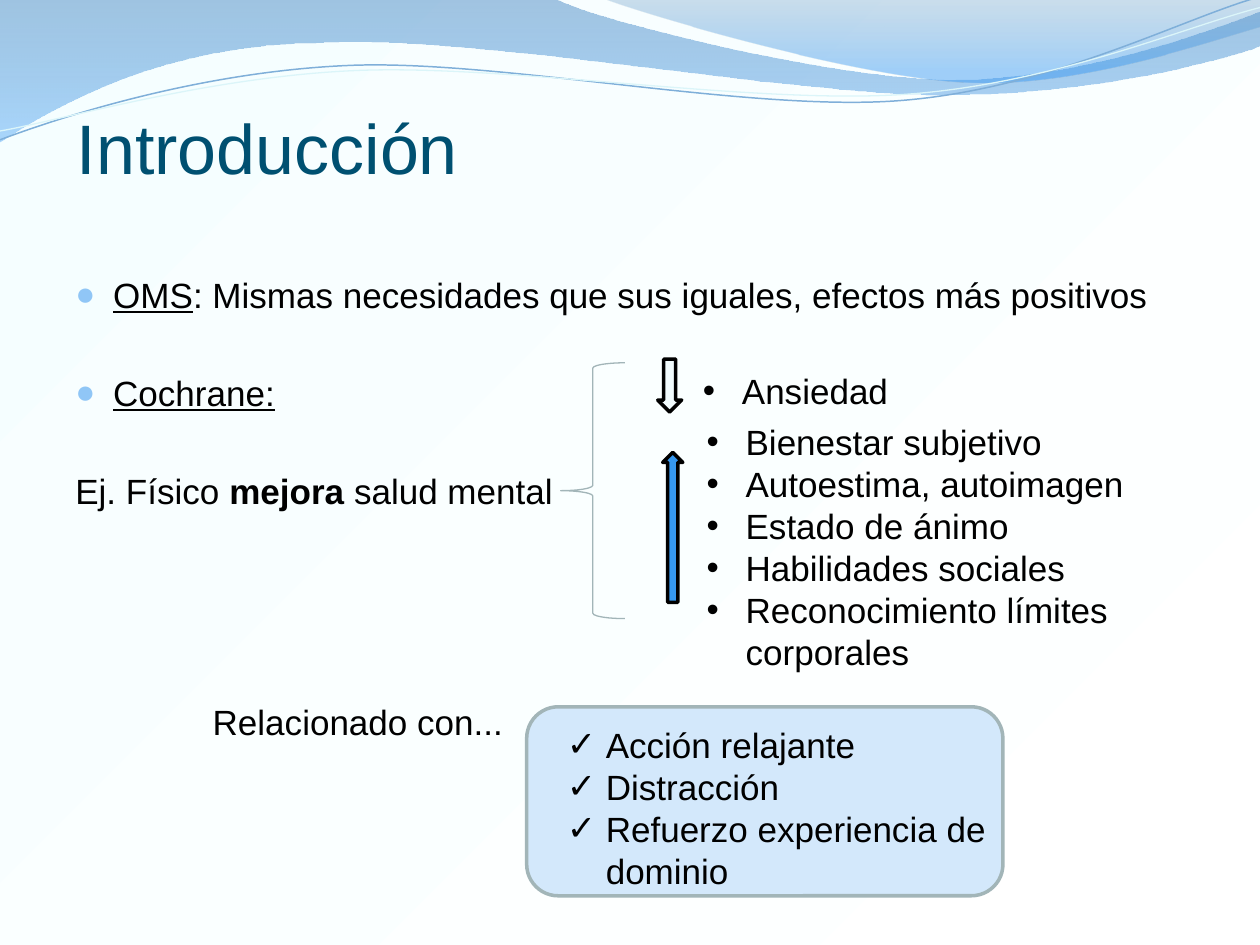
from dataclasses import dataclass

from lxml.etree import SubElement
from pptx import Presentation
from pptx.dml.color import RGBColor
from pptx.enum.shapes import MSO_SHAPE
from pptx.enum.text import MSO_ANCHOR, MSO_AUTO_SIZE, PP_ALIGN
from pptx.oxml.ns import qn
from pptx.util import Inches, Pt


@dataclass(frozen=True)
class Theme:
    """Colours and type sizes of the slide."""
    font: str = "Arial"
    title_size: int = 40
    text_size: int = 20
    title: str = "005071"
    text: str = "000000"
    bullet: str = "90C6F6"
    panel: str = "D3E8FB"
    panel_line: str = "A2B5B8"
    up: str = "3698EF"
    down: str = "F1FBFD"
    wave: str = "7FAFD9"
    wave_light: str = "DBF5F9"


class Deck:
    """Holds the style and the current slide."""

    def __init__(self, theme):
        """Open a presentation with one title-only slide."""
        self.t = theme
        self.prs = Presentation()
        self.prs.slide_width, self.prs.slide_height = Inches(10), Inches(7.5)
        self.s = self.prs.slides.add_slide(self.prs.slide_layouts[5])

    def gradient(self, fill, root, stops, angle):
        """Give a fill two (position, colour, opacity) stops and a clockwise angle."""
        fill.gradient()
        fill.gradient_angle = 360 - angle
        for stop, (pos, color, _) in zip(fill.gradient_stops, stops):
            stop.position = pos
            stop.color.rgb = RGBColor.from_string(color)
        grad = next(root.iter(qn("a:gradFill")))
        for clr, (_, _, opacity) in zip(grad.iter(qn("a:srgbClr")), stops):
            if opacity < 100:
                SubElement(clr, qn("a:alpha"), val=str(opacity * 1000))

    def background(self, stops, angle):
        """Fill the slide background with a gradient."""
        self.gradient(self.s.background.fill, self.s._element, stops, angle)

    def paint(self, sp, fill=None, line=None, width=1):
        """Set the fill and outline of a shape and drop its shadow."""
        sp.shadow.inherit = False
        if fill:
            sp.fill.solid()
            sp.fill.fore_color.rgb = RGBColor.from_string(fill)
        else:
            sp.fill.background()
        if line:
            sp.line.color.rgb = RGBColor.from_string(line)
            sp.line.width = Pt(width)
        else:
            sp.line.fill.background()

    def curve(self, start, segments, close=False, line=None, width=1):
        """Draw a path of straight (x, y) and Bézier (x1, y1, x2, y2, x, y) segments."""
        points = [(round(x * 100), round(y * 100))
                  for seg in segments for x, y in zip(seg[::2], seg[1::2])]
        x0, y0 = (round(v * 100) for v in start)
        fb = self.s.shapes.build_freeform(x0, y0, scale=Inches(0.01))
        fb.add_line_segments(points, close=close)
        sp = fb.convert_to_shape()
        nodes = iter(list(sp._element.iter(qn("a:lnTo"))))
        for seg in segments:
            node = next(nodes)
            if len(seg) == 6:
                node.tag = qn("a:cubicBezTo")
                for _ in range(2):
                    extra = next(nodes)
                    node.append(extra[0])
                    extra.getparent().remove(extra)
        self.paint(sp, line=line, width=width)
        return sp

    def wave(self, start, segments, stops):
        """Draw a closed wave with a vertical gradient."""
        sp = self.curve(start, segments, close=True)
        self.gradient(sp.fill, sp._element, stops, 90)

    def shape(self, kind, box, fill=None, line=None, width=1):
        """Add a preset shape."""
        sp = self.s.shapes.add_shape(kind, *map(Inches, box))
        self.paint(sp, fill, line, width)

    def run(self, p, text, size, color, bold=False, underline=False):
        """Add one run of text."""
        r = p.add_run()
        r.text = text
        f = r.font
        f.name, f.size, f.bold, f.underline = self.t.font, Pt(size), bold, underline
        f.color.rgb = RGBColor.from_string(color)

    def bullet(self, p, char, indent, color=None, size=100):
        """Give a paragraph a hanging bullet."""
        pPr = p._p.get_or_add_pPr()
        pPr.set("marL", str(Inches(indent)))
        pPr.set("indent", str(-Inches(indent)))
        if color:
            SubElement(SubElement(pPr, qn("a:buClr")), qn("a:srgbClr"), val=color)
        SubElement(pPr, qn("a:buSzPct"), val=str(size * 1000))
        SubElement(pPr, qn("a:buFont"), typeface=self.t.font)
        SubElement(pPr, qn("a:buChar"), char=char)

    def title(self, text, box):
        """Move the title placeholder to the front, format and fill it."""
        sp = self.s.shapes.title
        sp._element.getparent().append(sp._element)
        sp.left, sp.top, sp.width, sp.height = map(Inches, box)
        tf = sp.text_frame
        tf.auto_size, tf.word_wrap = MSO_AUTO_SIZE.NONE, False
        tf.vertical_anchor = MSO_ANCHOR.TOP
        p = tf.paragraphs[0]
        p.alignment = PP_ALIGN.LEFT
        self.run(p, text, self.t.title_size, self.t.title)

    def text(self, box, paragraphs, char=None, indent=0.31, gap=0, wrap=True, **bullet):
        """Add a text box; each paragraph is (bulleted, runs of (text, format))."""
        tf = self.s.shapes.add_textbox(*map(Inches, box)).text_frame
        tf.word_wrap = wrap
        for i, (bulleted, runs) in enumerate(paragraphs):
            p = tf.add_paragraph() if i else tf.paragraphs[0]
            p.space_before = Pt(gap if i else 0)
            if bulleted:
                self.bullet(p, char, indent, **bullet)
            for text, fmt in runs:
                self.run(p, text, self.t.text_size, self.t.text, **fmt)

    def items(self, box, lines, char="•", wrap=True):
        """Add a bulleted list of plain lines."""
        self.text(box, [(True, [(line, {})]) for line in lines], char, wrap=wrap)


def main():
    """Build and save the slide."""
    t = Theme()
    d = Deck(t)
    d.background([(0, "FFFFFF", 100), (1, "F5FEFF", 100)], 225)
    d.wave((0, -0.01), [(4.4, -0.01), (4.76, 0.17, 6.64, 0.63, 7.58, 0.63),
                        (8.53, 0.63, 9.58, 0.26, 10, 0.09), (10.01, 0.36),
                        (9.83, 0.44, 8.7, 0.76, 7.46, 0.75),
                        (6.22, 0.75, 3.82, 0.28, 2.57, 0.34),
                        (1.29, 0.35, 0.46, 0.83, -0.01, 1.13)],
           [(0, "377EBE", 45), (1, "69B5F9", 55)])
    d.wave((4.79, -0.01), [(5.09, 0.11, 6.82, 0.62, 7.69, 0.65),
                           (8.56, 0.69, 9.61, 0.32, 10, 0.21), (10, 0)],
           [(0, "5F93C1", 30), (0.8, "3496F1", 45)])
    d.curve((0, 1.11), [(0.48, 0.93, 1.58, 0.57, 2.77, 0.52),
                        (3.95, 0.47, 5.93, 0.89, 7.13, 0.8),
                        (8.33, 0.71, 9.38, 0.15, 9.98, -0.02)], line=t.wave, width=0.85)
    d.curve((0, 1.04), [(0.47, 0.96, 1.64, 0.61, 2.83, 0.56),
                        (4.03, 0.51, 5.97, 0.83, 7.17, 0.75),
                        (8.36, 0.67, 9.41, 0.21, 10, 0.06)], line=t.wave_light, width=0.75)

    under, bold = {"underline": True}, {"bold": True}
    d.text((0.5, 2.12, 9, 4.8), [
        (True, [("OMS", under),
                (": Mismas necesidades que sus iguales, efectos más positivos", {})]),
        (True, [("Cochrane:", under)]),
        (False, [("Ej. Físico ", {}), ("mejora ", bold), ("salud mental", {})]),
    ], "●", indent=0.3, gap=32, color=t.bullet, size=95)

    d.shape(MSO_SHAPE.ROUNDED_RECTANGLE, (4.18, 5.61, 3.78, 1.5), t.panel, t.panel_line, 2)
    d.items((5.48, 2.88, 1.69, 0.44), ["Ansiedad"], wrap=False)
    d.shape(MSO_SHAPE.LEFT_BRACE, (4.45, 2.88, 0.51, 2.03), line=t.panel_line, width=0.75)
    d.items((5.51, 3.29, 3.9, 2.12), ["Bienestar subjetivo", "Autoestima, autoimagen",
                                      "Estado de ánimo", "Habilidades sociales",
                                      "Reconocimiento límites corporales"])
    d.shape(MSO_SHAPE.UP_ARROW, (5.26, 3.59, 0.16, 1.19), t.up, t.text, 2)
    d.items((4.4, 5.69, 3.66, 1.44), ["Acción relajante", "Distracción",
                                      "Refuerzo experiencia de dominio"], "✓")
    d.shape(MSO_SHAPE.DOWN_ARROW, (5.22, 2.85, 0.19, 0.42), t.down, t.text, 2)
    d.text((1.59, 5.51, 2.8, 0.44), [(False, [("Relacionado con...", {})])])
    d.title("Introducción", (0.51, 0.78, 3.26, 0.77))
    d.prs.save("out.pptx")


if __name__ == "__main__":
    main()
